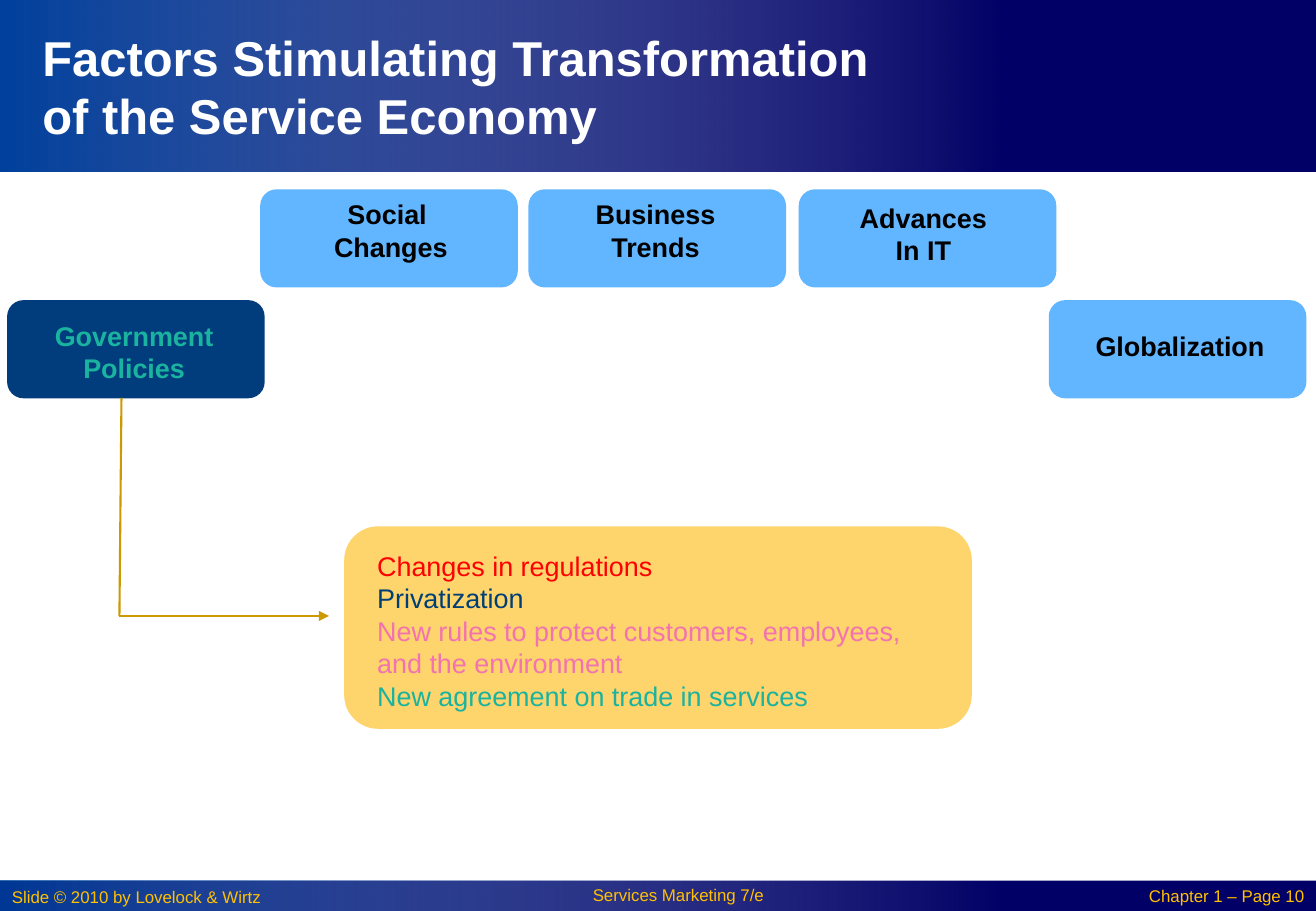
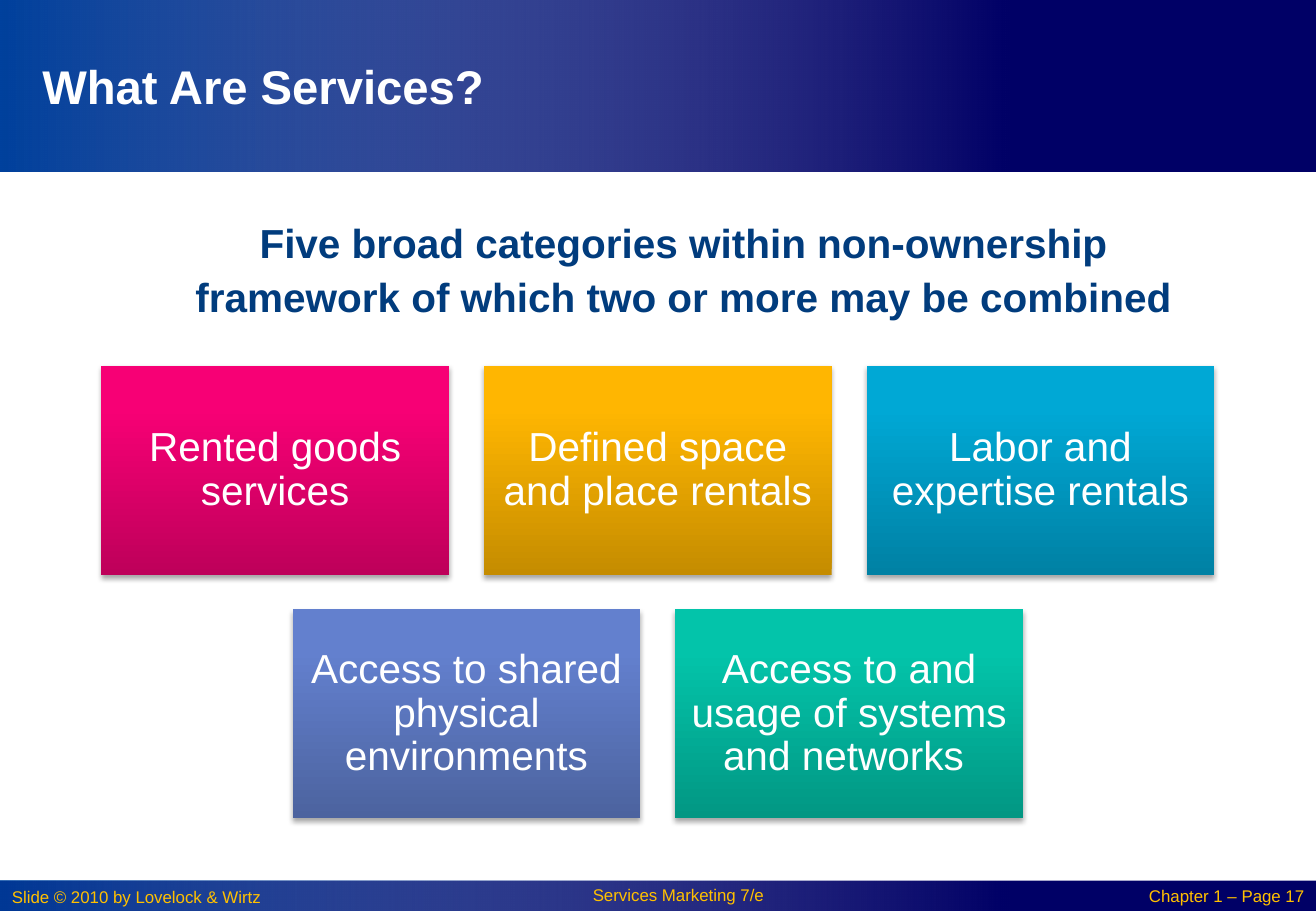
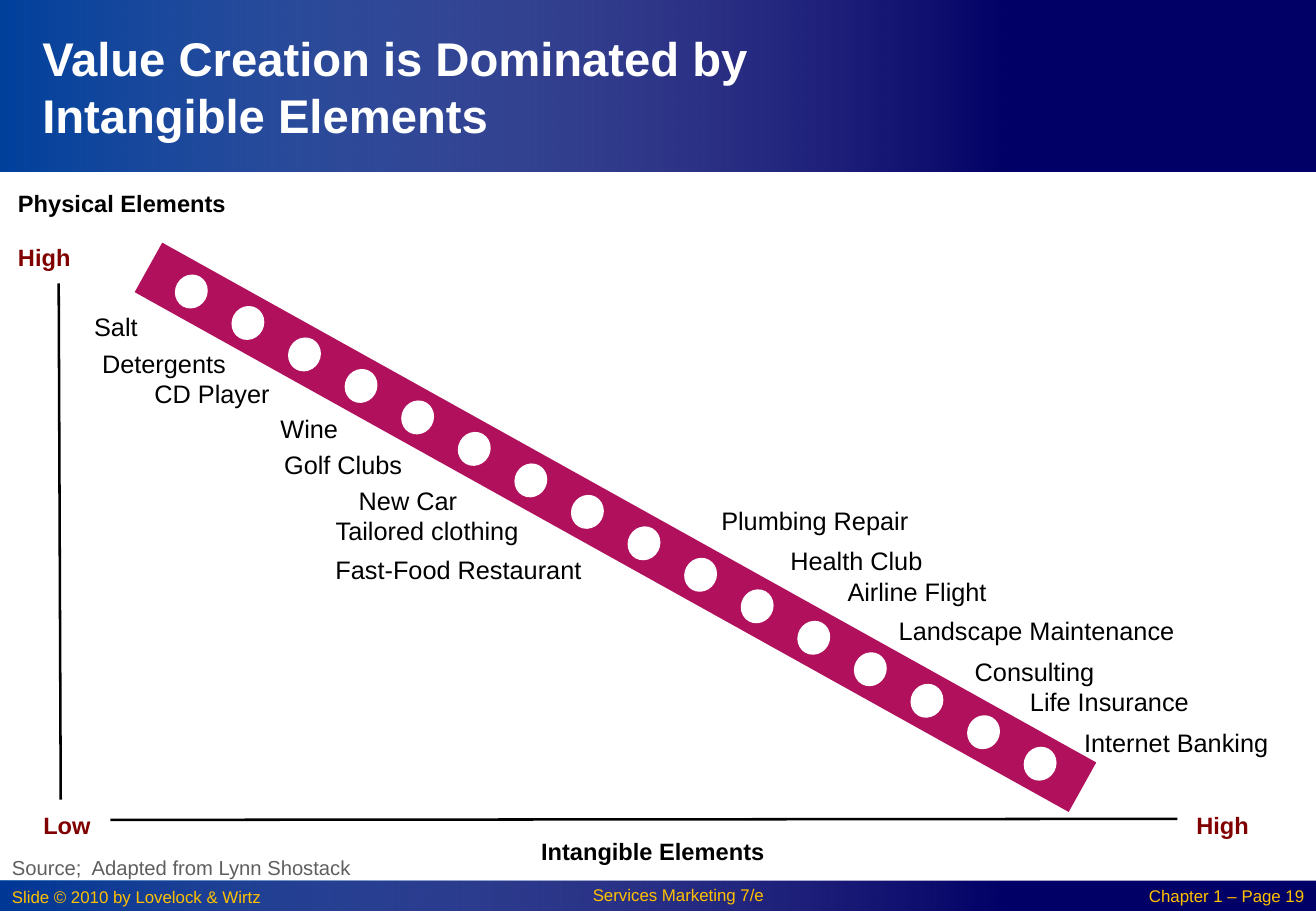
"""Build three service-marketing slides on a grid of 130 columns by 90 rows."""
from lxml import etree
from pptx import Presentation
from pptx import util as u
from pptx.dml.color import RGBColor
from pptx.enum import shapes, text
from pptx.oxml.ns import qn

COLUMNS, ROWS = 130, 90
CELL = u.Inches(7.5) // ROWS
FONT = "Arial"
WHITE = RGBColor(0xFF, 0xFF, 0xFF)
BLACK = RGBColor(0, 0, 0)
NAVY = RGBColor(0x00, 0x00, 0x66)
BAND_BLUE = RGBColor(0x01, 0x52, 0xAB)
AMBER = RGBColor(0xFF, 0xC0, 0x00)
DEEP_BLUE = RGBColor(0x01, 0x3C, 0x7D)
SKY = RGBColor(0x61, 0xB6, 0xFF)
TEAL = RGBColor(0x1A, 0xB3, 0x9F)
SAND = RGBColor(0xFE, 0xD4, 0x6C)
GOLD = RGBColor(0xCC, 0x99, 0x00)
RED = RGBColor(0xFF, 0x00, 0x00)
INK_BLUE = RGBColor(0x00, 0x3F, 0x75)
PINK = RGBColor(0xF2, 0x73, 0xAF)
MAROON = RGBColor(0x80, 0x00, 0x00)
GREY = RGBColor(0x5F, 0x5F, 0x5F)
CRIMSON = RGBColor(0xB0, 0x10, 0x5C)

RECTANGLE = shapes.MSO_SHAPE.RECTANGLE
ROUNDED = shapes.MSO_SHAPE.ROUNDED_RECTANGLE
LEFT, CENTER, RIGHT = text.PP_ALIGN.LEFT, text.PP_ALIGN.CENTER, text.PP_ALIGN.RIGHT
TOP, MIDDLE = text.MSO_ANCHOR.TOP, text.MSO_ANCHOR.MIDDLE


def draw(page, place, kind=None, fill=None):
    """Add a text box, or a flat shape of the given kind, at a grid place."""
    place = [round(span * CELL) for span in place]
    if kind is None:
        return page.shapes.add_textbox(*place)
    box = page.shapes.add_shape(kind, *place)
    box.shadow.inherit = False
    box.line.fill.background()
    if fill is not None:
        box.fill.solid()
        box.fill.fore_color.rgb = fill
    return box


def write(box, lines, size, color, bold=False, align=LEFT, spacing=1.0, anchor=TOP):
    """Fill a box with one paragraph a line and return the paragraphs."""
    frame = box.text_frame
    frame.word_wrap = True
    frame.vertical_anchor = anchor
    frame.text = "\n".join(lines)
    for para in frame.paragraphs:
        para.alignment = align
        para.line_spacing = spacing
        para.font.name = FONT
        para.font.size = u.Pt(size)
        para.font.bold = bold
        para.font.color.rgb = color
    return frame.paragraphs


deck = Presentation()
deck.slide_width, deck.slide_height = COLUMNS * CELL, ROWS * CELL

pages = []
for title, size, columns, number in [
    ("Factors Stimulating Transformation of the Service Economy", 29, 85, 10),
    ("What Are Services?", 28, 84, 17),
    ("Value Creation is Dominated by Intangible Elements", 28, 84, 19),
]:
    page = deck.slides.add_slide(deck.slide_layouts[6])
    pages.append(page)
    for row, rows, opacity in [(87, 3, 69), (0, 17, 80)]:
        draw(page, (0, row, COLUMNS, rows), RECTANGLE, NAVY)
        glow = draw(page, (0, row, 100, rows), RECTANGLE)
        glow.fill.gradient()
        glow.fill.gradient_angle = 0
        for stop, color in zip(glow.fill.gradient_stops, (BAND_BLUE, WHITE)):
            stop.color.rgb = color
        for tint, alpha in zip(glow._element.spPr.iter(qn("a:srgbClr")), (opacity, 0)):
            etree.SubElement(tint, qn("a:alpha"), val=str(alpha * 1000))
    for words, place, align, spacing in [
        ("Slide © 2010 by Lovelock & Wirtz", (0, 87, 31, 3), LEFT, 1.0),
        ("Services Marketing 7/e", (51, 87, 32, 3), CENTER, 0.9),
        (f"Chapter 1 – Page {number}", (109, 87.1, 21, 2.9), RIGHT, 0.9),
    ]:
        write(draw(page, place), [words], 10, AMBER, align=align, spacing=spacing)
    write(draw(page, (3, 3, columns, 11)), [title], size, WHITE, True, anchor=MIDDLE)

factors, services, spectrum = pages

for lines, column, row, inset, shift, fill, color in [
    (["Government", "Policies"], 0.7, 29.65, 0.12, -0.03, DEEP_BLUE, TEAL),
    (["Social ", "Changes"], 25.7, 18.7, 0.03, 0.03, SKY, BLACK),
    (["Business", "Trends"], 52.2, 18.7, 0.03, -0.03, SKY, BLACK),
    (["Advances", "In IT"], 78.9, 18.7, 0.06, -0.07, SKY, BLACK),
    (["Globalization"], 103.6, 29.65, 0.2, 0.04, SKY, BLACK),
]:
    tile = draw(factors, (column, row, 25.45, 9.7), ROUNDED, fill)
    tile.text_frame.margin_top = u.Inches(inset)
    tile.text_frame.margin_left = u.Inches(0.1 + shift)
    write(tile, lines, 16, color, True, CENTER)

policies = draw(factors, (34, 52, 62, 20), ROUNDED, SAND)
policies.text_frame.margin_left = u.Inches(0.19)
policies.text_frame.margin_top = u.Inches(0.11)
policies.text_frame.margin_right = u.Inches(0.15)
policy_colors = {
    "Changes in regulations": RED,
    "Privatization": INK_BLUE,
    "New rules to protect customers, employees, and the environment": PINK,
    "New agreement on trade in services": TEAL,
}
policies.text_frame.text = "\n".join(policy_colors)
for para in policies.text_frame.paragraphs:
    properties = para._p.get_or_add_pPr()
    properties.set("marL", str(3 * CELL))
    properties.set("indent", str(-3 * CELL))
    etree.SubElement(properties, qn("a:buFont"), typeface=FONT)
    etree.SubElement(properties, qn("a:buChar"), char="▪")
for para, color in zip(write(policies, policy_colors, 16, BLACK), policy_colors.values()):
    para.font.color.rgb = color

heading = draw(services, (10, 20.5, 110, 11.4))
heading.text_frame.margin_left = u.Inches(0.52)
write(heading, ["Five broad categories within non-ownership framework of which two or more may be combined"],
      24, DEEP_BLUE, True, CENTER, 1.1)

for words, column, row, dark, bright in [
    ("Rented goods services", 0, 0, "BE005A", "F70075"),
    ("Defined space and place rentals", 1, 0, "C58C00", "FFB601"),
    ("Labor and expertise rentals", 2, 0, "0081A4", "00A8D5"),
    ("Access to shared physical environments", 0.5, 1, "4C639F", "6380CE"),
    ("Access to and usage of systems and networks ", 1.5, 1, "029783", "03C4AA"),
]:
    card = draw(services, (10 + 37.8 * column, 36.15 + 24.05 * row, 34.35, 20.65), RECTANGLE)
    card.fill.gradient()
    card.fill.gradient_angle = 90
    for stop, color, position in zip(card.fill.gradient_stops, (dark, bright), (0, 0.8)):
        stop.color.rgb = RGBColor.from_string(color)
        stop.position = position
    shadow = etree.SubElement(
        card._element.spPr.find(qn("a:effectLst")), qn("a:outerShdw"),
        blurRad=str(u.Pt(3.1)), dist=str(u.Pt(1.8)), dir="5400000", rotWithShape="0")
    tint = etree.SubElement(shadow, qn("a:srgbClr"), val="000000")
    etree.SubElement(tint, qn("a:alpha"), val="35000")
    write(card, [words], 24, WHITE, align=CENTER, spacing=0.9, anchor=MIDDLE)

physical = write(draw(spectrum, (0.6, 17, 26.4, 10.6)), ["Physical Elements", "High"],
                 14, BLACK, True, spacing=1.4)
physical[1].space_before = u.Pt(8)
physical[1].font.color.rgb = MAROON
for words, place, size, color, bold, align in [
    ("Low", (3.1, 78.4, 10.8, 4.7), 14, MAROON, True, LEFT),
    ("High", (117, 78.4, 10.3, 4.7), 14, MAROON, True, LEFT),
    ("Source;  Adapted from Lynn Shostack", (0, 83, 126, 4.6), 12, GREY, False, LEFT),
    ("Intangible Elements", (49, 81, 31, 4.7), 14, BLACK, True, CENTER),
]:
    write(draw(spectrum, place), [words], size, color, bold, align, 1.4)

for words, column, row, columns in [
    ("Salt", 4.3, 29, 14.3),
    ("Detergents", 3, 32.6, 26.4),
    ("CD Player", 11.4, 35.6, 19.1),
    ("Wine", 22.8, 39, 15.5),
    ("Golf Clubs", 23.5, 42.6, 20.8),
    ("New Car", 32.4, 46.1, 15.8),
    ("Tailored clothing", 29, 49.1, 26.4),
    ("Fast-Food Restaurant", 25.4, 53, 39.8),
    ("Plumbing Repair", 67.3, 48.1, 26.4),
    ("Health Club", 71.4, 52.1, 26.4),
    ("Airline Flight", 77.4, 55.1, 26.4),
    ("Landscape Maintenance", 81.6, 59, 41.6),
    ("Consulting", 89, 63, 26.4),
    ("Life Insurance", 96.4, 66, 26.4),
    ("Internet Banking", 103, 70.1, 26.4),
]:
    write(draw(spectrum, (column, row, columns, 5.4)), [words], 15, BLACK, align=CENTER, spacing=1.4)

beam = draw(spectrum, (8, 49.3, 105.6, 5.6), RECTANGLE, CRIMSON)
beam.rotation = 29.1
for step in range(16):
    dot = draw(spectrum, (17.3 + 5.59 * step, 27.1 + 3.11 * step, 3.2, 3.4), shapes.MSO_SHAPE.OVAL, WHITE)
    dot.rotation = beam.rotation

for page, ends, color, width, arrow in [
    (factors, (12, 39.3, 11.8, 60.85), GOLD, 1.25, False),
    (factors, (11.8, 60.85, 32.5, 60.85), GOLD, 1.25, True),
    (spectrum, (5.8, 28, 6, 79), BLACK, 1.5, False),
    (spectrum, (10.9, 81, 116.3, 80.9), BLACK, 1.5, False),
]:
    line = page.shapes.add_connector(shapes.MSO_CONNECTOR.STRAIGHT, *[round(end * CELL) for end in ends])
    line.line.color.rgb = color
    line.line.width = u.Pt(width)
    properties = line._element.spPr
    if arrow:
        etree.SubElement(properties.find(qn("a:ln")), qn("a:tailEnd"), type="triangle")
    etree.SubElement(properties, qn("a:effectLst"))

deck.save("out.pptx")
